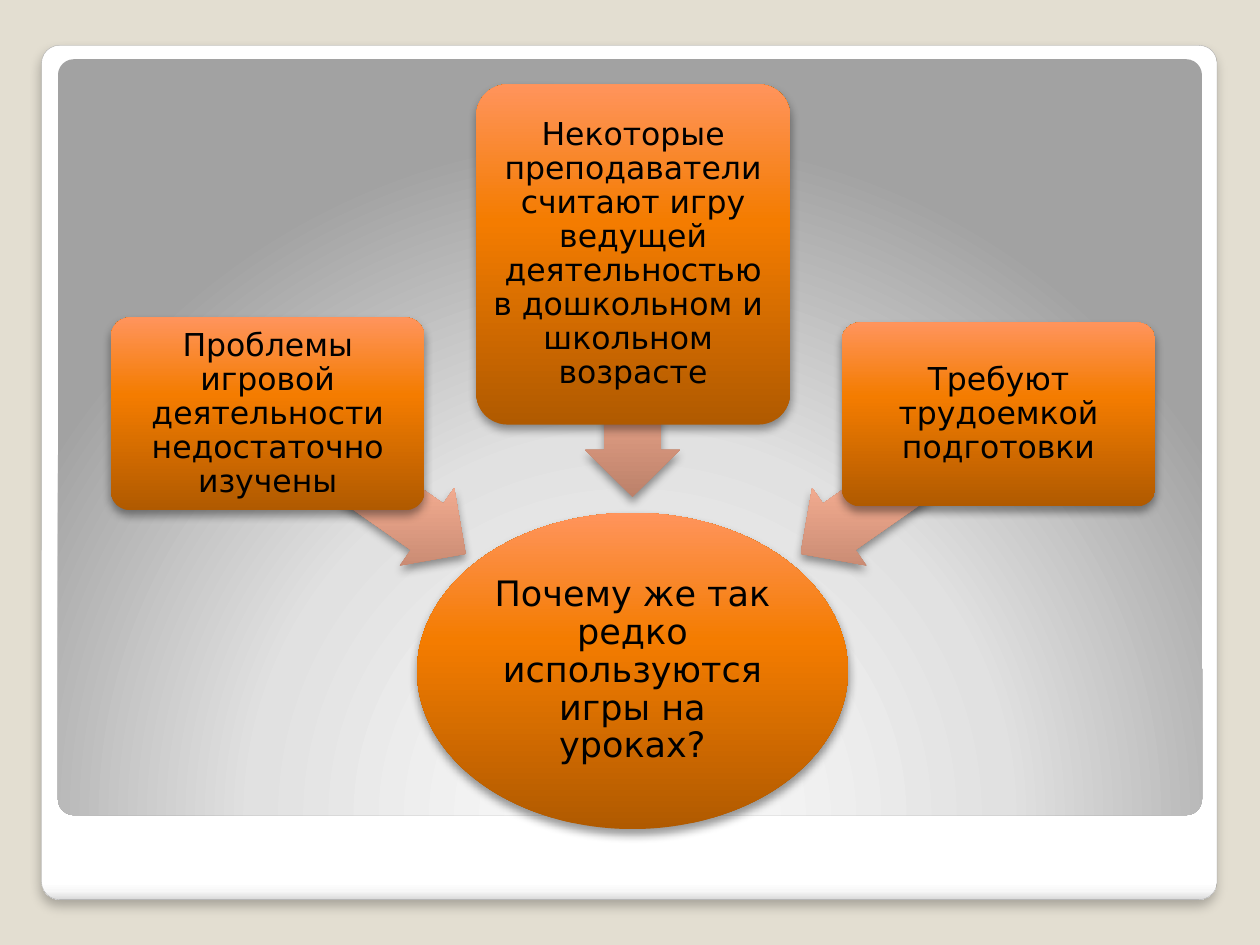
"""Builds a slide where three reasons point at one central question."""
import pptx
import pptx.dml.color
import pptx.enum.shapes
import pptx.enum.text
import pptx.oxml.ns
import pptx.util
from lxml import etree

Inches = pptx.util.Inches
Pt = pptx.util.Pt
SHAPE = pptx.enum.shapes.MSO_SHAPE
qn = pptx.oxml.ns.qn

ORANGE = [(0, "B05A00"), (60, "F47C00"), (100, "FF945C")]
PEACH = [(0, "BC816A"), (60, "FFB599"), (100, "FFC6B1")]
WHITE = [(0, "FFFFFF"), (98, "FFFFFF"), (99, "F7F7F7"), (100, "DADADA")]
GREY = [(0, "FFFFFF"), (55, "E1E1E1"), (100, "A2A2A2")]


def color(hex_code):
    """Return the colour for a hex string."""
    return pptx.dml.color.RGBColor.from_string(hex_code)


class ReasonSlide:
    """Holds the style and the current slide."""

    font = "DejaVu Sans"
    ink = "000000"
    raised = (40, 5.2, 3)

    def __init__(self, deck, background):
        """Add a blank slide with a plain background."""
        self.slide = deck.slides.add_slide(deck.slide_layouts[6])
        self.slide.background.fill.solid()
        self.slide.background.fill.fore_color.rgb = color(background)

    def shape(self, kind, box, stops, angle=270, shadow=None, adjustments=()):
        """Add a borderless gradient shape with an optional shadow."""
        shape = self.slide.shapes.add_shape(kind, *(Inches(v) for v in box))
        for index, value in enumerate(adjustments):
            shape.adjustments[index] = value
        self.gradient(shape, stops, angle)
        shape.line.fill.background()
        shape.shadow.inherit = False
        if shadow:
            self.cast_shadow(shape, *shadow)
        return shape

    def gradient(self, shape, stops, angle):
        """Fill linearly, or outwards from below when angle is None."""
        shape.fill.gradient()
        fill = shape._element.spPr.find(qn("a:gradFill"))
        for child in list(fill):
            fill.remove(child)
        fill.set("rotWithShape", "0")
        stop_list = etree.SubElement(fill, qn("a:gsLst"))
        for position, hex_code in stops:
            stop = etree.SubElement(stop_list, qn("a:gs"), pos=str(position * 1000))
            etree.SubElement(stop, qn("a:srgbClr"), val=hex_code)
        if angle is None:
            circle = etree.SubElement(fill, qn("a:path"), attrib={"path": "circle"})
            etree.SubElement(circle, qn("a:fillToRect"),
                             l="50000", t="175000", r="50000", b="-75000")
        else:
            etree.SubElement(fill, qn("a:lin"), ang=str(angle * 60000), scaled="0")

    def cast_shadow(self, shape, opacity, blur, distance):
        """Drop a black shadow straight down."""
        effects = shape._element.spPr.find(qn("a:effectLst"))
        shadow = etree.SubElement(
            effects, qn("a:outerShdw"), blurRad=str(Pt(blur)), dist=str(Pt(distance)),
            dir="5400000", algn="ctr", rotWithShape="0")
        black = etree.SubElement(shadow, qn("a:srgbClr"), val="000000")
        etree.SubElement(black, qn("a:alpha"), val=str(opacity * 1000))

    def label(self, shape, words, size, inset):
        """Put centred text in a shape."""
        frame = shape.text_frame
        frame.word_wrap = True
        frame.vertical_anchor = pptx.enum.text.MSO_ANCHOR.MIDDLE
        frame.margin_left = frame.margin_right = Inches(inset)
        frame.margin_top = frame.margin_bottom = Inches(inset)
        frame.text = words
        paragraph = frame.paragraphs[0]
        paragraph.alignment = pptx.enum.text.PP_ALIGN.CENTER
        paragraph.line_spacing = 0.9
        font = paragraph.runs[0].font
        font.name, font.size = self.font, Pt(size)
        font.color.rgb = color(self.ink)

    def panel(self, box, stops, angle, shadow=None):
        """Add a slightly rounded backdrop."""
        return self.shape(SHAPE.ROUNDED_RECTANGLE, box, stops, angle, shadow, [0.021])

    def question(self, box, words):
        """Add the central ellipse."""
        ellipse = self.shape(SHAPE.OVAL, box, ORANGE, shadow=self.raised)
        self.label(ellipse, words, 20, 0.01)

    def arrow(self, box, rotation):
        """Add an arrow towards the question."""
        arrow = self.shape(SHAPE.LEFT_ARROW, box, PEACH, shadow=self.raised,
                           adjustments=[0.6, 0.5])
        arrow.rotation = rotation

    def reason(self, box, words):
        """Add a rounded box with a reason."""
        card = self.shape(SHAPE.ROUNDED_RECTANGLE, box, ORANGE, shadow=self.raised,
                          adjustments=[0.1])
        self.label(card, words, 18, 0.04)


def main():
    """Build and save the deck."""
    deck = pptx.Presentation()
    deck.slide_width, deck.slide_height = Inches(10), Inches(7.5)
    page = ReasonSlide(deck, "E3DED1")

    frame = page.panel((0.33, 0.36, 9.33, 6.78), WHITE, 90, (25, 6, 4))
    frame.line.color.rgb = color("A4A4A4")
    frame.line.width = Pt(0.16)
    page.panel((0.46, 0.47, 9.08, 6), GREY, None)

    page.question((3.31, 4.07, 3.42, 2.51),
                  "Почему же так редко используются игры на уроках?")
    reasons = [
        ((1.95, 3.47), 215, (0.88, 2.52), 1.53,
         "Проблемы игровой деятельности недостаточно изучены"),
        ((4.06, 2.61), 270, (3.78, 0.67), 2.7,
         "Некоторые преподаватели считают игру ведущей деятельностью "
         "в дошкольном и  школьном  возрасте"),
        ((6.18, 3.47), 325, (6.68, 2.56), 1.46,
         "Требуют трудоемкой подготовки"),
    ]
    for arrow_corner, rotation, card_corner, height, words in reasons:
        page.arrow((*arrow_corner, 1.92, 0.75), rotation)
        page.reason((*card_corner, 2.49, height), words)

    deck.save("out.pptx")


if __name__ == "__main__":
    main()
